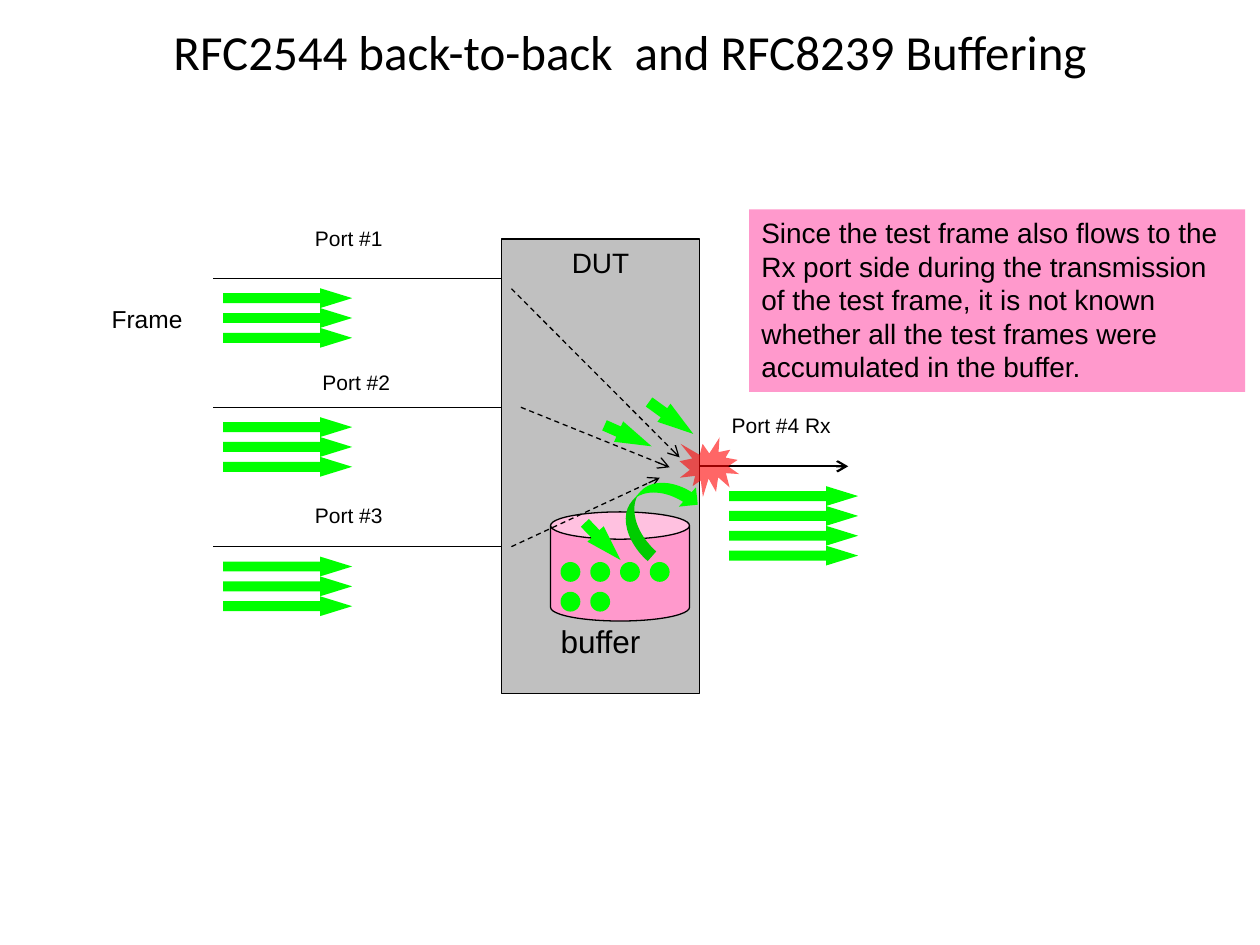
"""Build the slide on back-to-back frame tests and port buffering."""
from lxml.etree import SubElement as Sub
from pptx import Presentation
from pptx.dml.color import RGBColor as Rgb
from pptx.enum.dml import MSO_LINE as Dash
from pptx.enum.shapes import MSO_CONNECTOR as Link, MSO_SHAPE as Kind
from pptx.enum.text import MSO_ANCHOR as Anchor, PP_ALIGN as Align
from pptx.oxml.ns import qn
from pptx.util import Cm, Pt

HUES = {"ink": "000000", "gray": "C0C0C0", "pink": "FF99CC",
        "green": "00FF00", "red": "FF0000"}
STEP = 0.4
NOTE = ("Since the test frame also flows to the Rx port side during the "
        "transmission of the test frame, it is not known whether all the "
        "test frames were accumulated in the buffer.")


def tint(name):
    return Rgb.from_string(HUES[name])


def write(shape, text, size=12, font="Arial", align=Align.LEFT, anchor=Anchor.TOP):
    frame = shape.text_frame
    frame.word_wrap = True
    frame.vertical_anchor = anchor
    para = frame.paragraphs[0]
    para.alignment = align
    run = para.add_run()
    run.text = text
    run.font.size = Pt(size)
    run.font.name = font
    run.font.color.rgb = tint("ink")


def label(slide, text, x, y, w=3.4, h=0.76, **form):
    write(slide.shapes.add_textbox(Cm(x), Cm(y), Cm(w), Cm(h)), text, **form)


def block(slide, kind, x, y, w, h, fill, edge=False, turn=0):
    shape = slide.shapes.add_shape(kind, Cm(x), Cm(y), Cm(w), Cm(h))
    shape.shadow.inherit = False
    shape.rotation = turn
    shape.fill.solid()
    shape.fill.fore_color.rgb = tint(fill)
    if edge:
        shape.line.color.rgb = tint("ink")
        shape.line.width = Pt(0.75)
    else:
        shape.line.fill.background()
    return shape


def arrow(slide, x, y, w=2.6, h=STEP, turn=180):
    shape = block(slide, Kind.LEFT_ARROW, x, y, w, h, "green", turn=turn)
    shape.adjustments[0] = 0.5
    shape.adjustments[1] = 1.62


def stack(slide, x, y, count):
    for row in range(count):
        arrow(slide, x, y + row * STEP)


def line(slide, x1, y1, x2, y2, width=0.75, dash=False, head=False):
    link = slide.shapes.add_connector(Link.STRAIGHT, Cm(x1), Cm(y1), Cm(x2), Cm(y2))
    link.line.color.rgb = tint("ink")
    link.line.width = Pt(width)
    if dash:
        link.line.dash_style = Dash.DASH
    if head:
        Sub(link.line._get_or_add_ln(), qn("a:tailEnd"), type="arrow")
    Sub(link.element.spPr, qn("a:effectLst"))
    return link


def title(slide, text):
    head, rest = slide.placeholders
    rest.element.getparent().remove(rest.element)
    head.left, head.top, head.width, head.height = Cm(1.9), Cm(0.33), Cm(21.6), Cm(1.4)
    write(head, text, size=28, font="Calibri", align=Align.CENTER, anchor=Anchor.MIDDLE)


def port(slide, text, x, y, wire):
    line(slide, 4.3, wire, 10.11, wire)
    label(slide, text, x, y)
    stack(slide, 4.5, wire + 0.2, 3)


def buffer(slide):
    block(slide, Kind.CAN, 11.1, 10.32, 2.8, 2.2, "pink", edge=True)
    for row, count in enumerate((4, 2)):
        for col in range(count):
            block(slide, Kind.OVAL, 11.3 + col * 0.6, 11.33 + row * 0.6,
                  STEP, STEP, "green")
    label(slide, "buffer", 11.05, 12.42, h=1.02, size=18)


def burst(slide):
    seal = block(slide, Kind.EXPLOSION1, 13.7, 8.82, 1.2, 1.2, "red")
    hue = seal.element.spPr.find(qn("a:solidFill"))[0]
    Sub(hue, qn("a:alpha"), val="60000")


def main():
    deck = Presentation()
    deck.slide_width, deck.slide_height = Cm(25.4), Cm(19.05)
    slide = deck.slides.add_slide(deck.slide_layouts[0])
    title(slide, "RFC2544 back-to-back  and RFC8239 Buffering")

    dut = block(slide, Kind.RECTANGLE, 10.11, 4.82, 3.99, 9.16, "gray", edge=True)
    write(dut, "DUT", size=16, align=Align.CENTER)
    out = line(slide, 14.1, 9.4, 17.1, 9.4, width=1.25, head=True)
    out.begin_connect(dut, 3)
    label(slide, "Port #4 Rx", 14.5, 8.2)
    stack(slide, 14.7, 9.8, 4)

    label(slide, "Frame", 2, 6, w=2.2, h=0.86, size=14)
    for name, x, y, wire in (("Port #1", 6.1, 4.42, 5.61),
                             ("Port #2", 6.25, 7.32, 8.21),
                             ("Port #3", 6.1, 10.01, 11.02)):
        port(slide, name, x, y, wire)

    buffer(slide)
    note = block(slide, Kind.RECTANGLE, 15.1, 4.22, 10, 3.68, "pink")
    write(note, NOTE, size=16)

    for ends in ((10.31, 5.82, 13.7, 9.22), (10.5, 8.21, 13.5, 9.42),
                 (10.31, 11.02, 13.3, 9.63)):
        line(slide, *ends, dash=True, head=True)
    burst(slide)
    for x, y, w, turn in ((12.98, 8.2, 1.1, 215.8), (11.63, 10.69, 1.04, 226.2),
                          (12.14, 8.56, 1.04, 204)):
        arrow(slide, x, y, w, 0.45, turn)
    block(slide, Kind.CURVED_DOWN_ARROW, 12.37, 9.78, 1.78, 1.04, "green", turn=311.6)
    deck.save("out.pptx")


if __name__ == "__main__":
    main()
